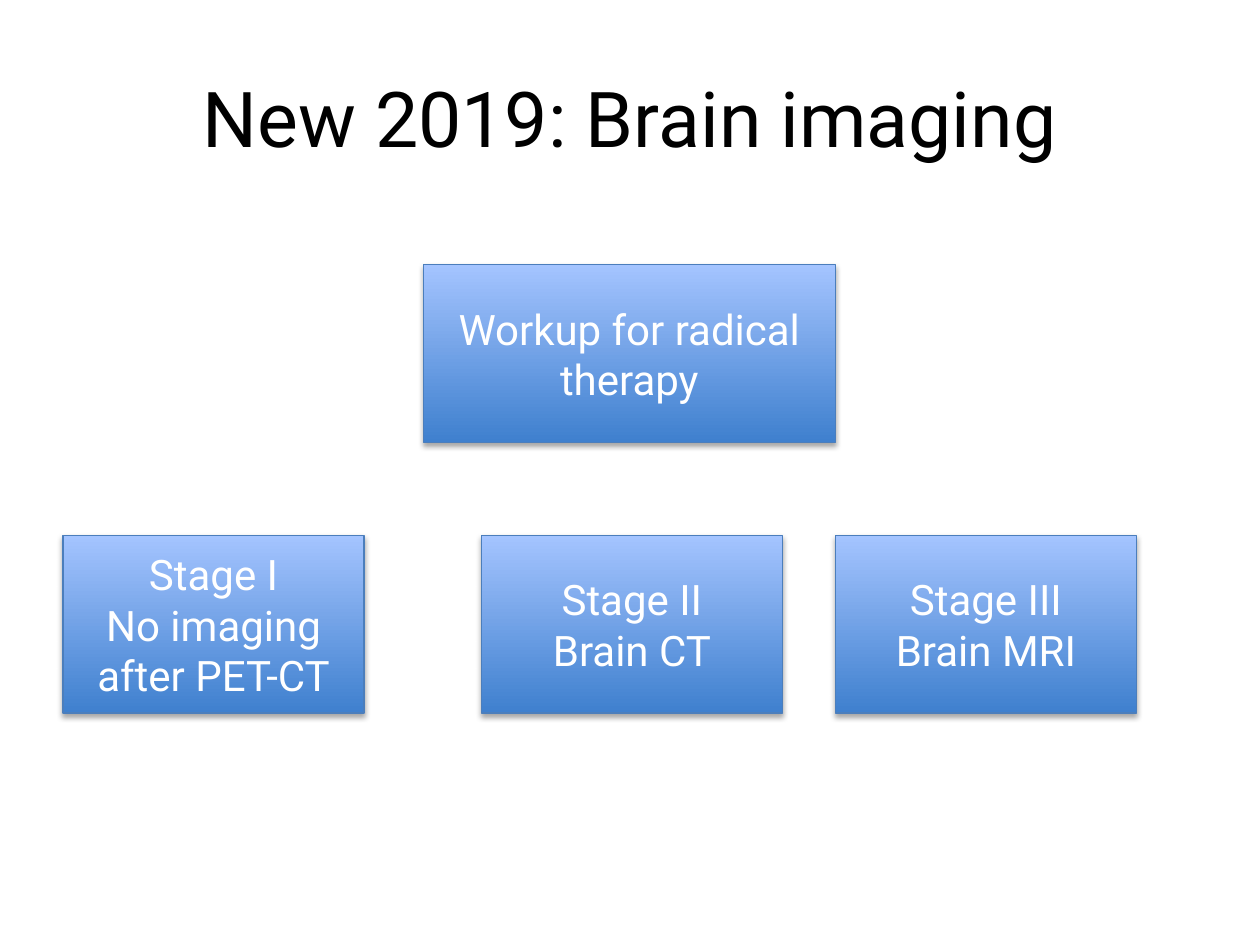
import pptx
import pptx.util
import pptx.oxml
import pptx.oxml.ns
import pptx.dml.color
import pptx.enum.text
import pptx.enum.shapes

THEME = {
    "font": "Roboto",
    "title_size": 44,
    "box_size": 24,
    "title_color": "000000",
    "box_text": "FFFFFF",
    "gradient": ("3F80CE", "A4C4FF"),
    "border": "4B7EBC",
    "shadow": "000000",
}


def rgb(key):
    return pptx.dml.color.RGBColor.from_string(THEME[key])


def write(frame, text, size, color):
    frame.text = text
    frame.word_wrap = True
    frame.vertical_anchor = pptx.enum.text.MSO_ANCHOR.MIDDLE
    for paragraph in frame.paragraphs:
        paragraph.alignment = pptx.enum.text.PP_ALIGN.CENTER
        for run in paragraph.runs:
            run.font.name = THEME["font"]
            run.font.size = pptx.util.Pt(THEME[size])
            run.font.color.rgb = rgb(color)


deck = pptx.Presentation()
deck.slide_width = pptx.util.Inches(10)
deck.slide_height = pptx.util.Inches(7.5)
slide = deck.slides.add_slide(deck.slide_layouts[5])

margin = deck.slide_width * 0.05
heading = slide.shapes.title
heading.left, heading.top = int(margin), int(deck.slide_height * 0.04)
heading.width = int(deck.slide_width - 2 * margin)
heading.height = pptx.util.Inches(1.25)
write(heading.text_frame, "New 2019: Brain imaging", "title_size", "title_color")

box_height = pptx.util.Inches(1.41)
workup_row, stage_row = 2.1, 4.25
workup_width, stage_width = 3.27, 2.39
steps = [
    ("Workup for radical therapy", 3.36, workup_row, workup_width),
    ("Stage I\nNo imaging after PET-CT", 0.5, stage_row, stage_width),
    ("Stage II\nBrain CT", 3.82, stage_row, stage_width),
    ("Stage III\nBrain MRI", 6.63, stage_row, stage_width),
]

for wording, left, top, width in steps:
    step = slide.shapes.add_shape(
        pptx.enum.shapes.MSO_SHAPE.RECTANGLE,
        pptx.util.Inches(left), pptx.util.Inches(top),
        pptx.util.Inches(width), box_height,
    )
    step.fill.gradient()
    step.fill.gradient_angle = 90
    for stop, position, shade in zip(step.fill.gradient_stops, (0, 1), THEME["gradient"]):
        stop.position = position
        stop.color.rgb = pptx.dml.color.RGBColor.from_string(shade)
    step.line.color.rgb = rgb("border")
    step.line.width = pptx.util.Pt(0.75)

    step.shadow.inherit = False
    effects = step._element.spPr.find(pptx.oxml.ns.qn("a:effectLst"))
    effects.append(pptx.oxml.parse_xml(
        f'<a:outerShdw {pptx.oxml.ns.nsdecls("a")} blurRad="{pptx.util.Pt(3.1)}" '
        f'dist="{pptx.util.Pt(1.8)}" dir="5400000" rotWithShape="0">'
        f'<a:srgbClr val="{THEME["shadow"]}"><a:alpha val="35000"/></a:srgbClr>'
        '</a:outerShdw>'
    ))
    write(step.text_frame, wording, "box_size", "box_text")

deck.save("out.pptx")
